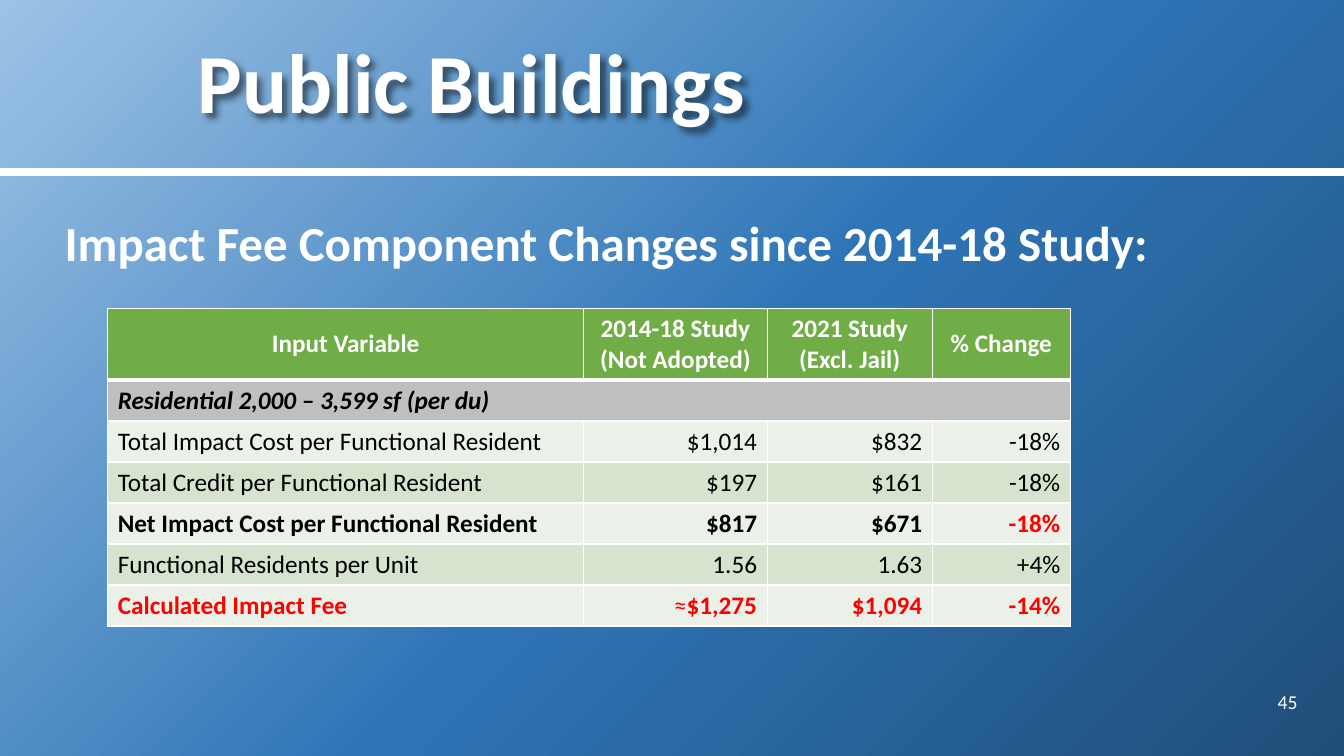
import copy
import pptx
import pptx.dml.color
import pptx.enum.shapes
import pptx.enum.text
import pptx.oxml
import pptx.oxml.ns
import pptx.util

Pt = pptx.util.Pt
ALIGN = pptx.enum.text.PP_ALIGN
ANCHOR = pptx.enum.text.MSO_ANCHOR
qn = pptx.oxml.ns.qn

COLORS = {
    "white": "FFFFFF", "black": "000000", "red": "FF0000",
    "sky": "9DC3E6", "blue": "2E75B6", "navy": "1F4E79",
    "header": "70AD47", "section": "BFBFBF", "light": "EBF1E9", "dark": "D5E3CF",
}
COLUMN_WIDTHS = [340, 131, 118, 98.6]
HEADERS = ["Input Variable", "2014-18 Study (Not Adopted)", "2021 Study (Excl. Jail)", "% Change"]
SECTION = "Residential 2,000 – 3,599 sf (per du)"
# Each row: cell texts, bold, label and value colour, change colour
ROWS = [
    (["Total Impact Cost per Functional Resident", "$1,014", "$832", "-18%"], False, "black", "black"),
    (["Total Credit per Functional Resident", "$197", "$161", "-18%"], False, "black", "black"),
    (["Net Impact Cost per Functional Resident", "$817", "$671", "-18%"], True, "black", "red"),
    (["Functional Residents per Unit", "1.56", "1.63", "+4%"], False, "black", "black"),
    (["Calculated Impact Fee", "≈$1,275", "$1,094", "-14%"], True, "red", "red"),
]


def rgb(name):
    return pptx.dml.color.RGBColor.from_string(COLORS[name])


def drawing_xml(body):
    """Parse an element whose first tag takes the DrawingML namespace."""
    tag, rest = body.split(" ", 1)
    return pptx.oxml.parse_xml(f"{tag} {pptx.oxml.ns.nsdecls('a')} {rest}")


class SlideBuilder:
    font_name = "Calibri"

    def __init__(self, slide):
        self.slide = slide

    def background(self, stops):
        """Fill the slide diagonally with (position, colour) stops."""
        fill = self.slide.background.fill
        fill.gradient()
        fill.gradient_angle = 315
        stop_list = next(self.slide.element.iter(qn("a:gsLst")))
        stop_list.insert(1, copy.deepcopy(stop_list[0]))
        for element, stop, (position, color) in zip(stop_list, fill.gradient_stops, stops):
            stop.color.rgb = rgb(color)
            element.set("pos", str(position * 1000))

    def run(self, paragraph, text, size, color, bold=False, italic=False):
        run = paragraph.add_run()
        run.text = text
        font = run.font
        font.name, font.size = self.font_name, Pt(size)
        font.bold, font.italic = bold, italic
        font.color.rgb = rgb(color)

    def frame(self, shape, box, anchor, align):
        """Place a text shape and return its first paragraph."""
        shape.left, shape.top, shape.width, shape.height = map(Pt, box)
        text_frame = shape.text_frame
        text_frame.word_wrap = True
        text_frame.auto_size = pptx.enum.text.MSO_AUTO_SIZE.NONE
        text_frame.vertical_anchor = anchor
        paragraph = text_frame.paragraphs[0]
        paragraph.alignment = align
        paragraph.space_before = Pt(0)
        return paragraph

    def title(self, text, box):
        shape = self.slide.shapes.title
        paragraph = self.frame(shape, box, ANCHOR.MIDDLE, ALIGN.LEFT)
        paragraph.line_spacing = 0.9
        self.run(paragraph, text, 60, "white", bold=True)
        shape.element.spPr.append(drawing_xml(
            '<a:effectLst ><a:outerShdw blurRad="50800" dist="50800" dir="2700000" algn="tl">'
            '<a:srgbClr val="000000"><a:alpha val="50000"/></a:srgbClr>'
            '</a:outerShdw></a:effectLst>'))

    def body(self, text, box):
        paragraph = self.frame(self.slide.placeholders[1], box, ANCHOR.TOP, ALIGN.LEFT)
        paragraph.line_spacing = 1.2
        properties = paragraph._p.get_or_add_pPr()
        properties.set("marL", "0")
        properties.set("indent", "0")
        properties.append(drawing_xml("<a:buNone />"))
        self.run(paragraph, text, 35, "white", bold=True)

    def slide_number(self, text, box):
        shape = self.slide.shapes.add_textbox(*map(Pt, box))
        paragraph = self.frame(shape, box, ANCHOR.MIDDLE, ALIGN.RIGHT)
        self.run(paragraph, text, 14, "white")

    def rule(self, top, width, weight):
        line = self.slide.shapes.add_connector(
            pptx.enum.shapes.MSO_CONNECTOR.STRAIGHT, Pt(0), Pt(top), Pt(width), Pt(top))
        line.line.color.rgb = rgb("white")
        line.line.width = Pt(weight)
        line.element.spPr.append(drawing_xml("<a:effectLst />"))

    def table(self, left, top, widths, heights):
        frame = self.slide.shapes.add_table(
            len(heights), len(widths), Pt(left), Pt(top), Pt(sum(widths)), Pt(sum(heights)))
        for column, width in zip(frame.table.columns, widths):
            column.width = Pt(width)
        for row, height in zip(frame.table.rows, heights):
            row.height = Pt(height)
        return frame.table

    def cell(self, cell, text, fill, color, align, bold=False, italic=False, top=1, bottom=1):
        """Fill one cell; top and bottom are border weights."""
        properties = cell._tc.get_or_add_tcPr()
        for side, weight in (("L", 1), ("R", 1), ("T", top), ("B", bottom)):
            properties.append(drawing_xml(
                f'<a:ln{side} w="{Pt(weight)}"><a:solidFill><a:srgbClr val="{COLORS["white"]}"/>'
                f'</a:solidFill></a:ln{side}>'))
        cell.fill.solid()
        cell.fill.fore_color.rgb = rgb(fill)
        cell.vertical_anchor = ANCHOR.MIDDLE
        paragraph = cell.text_frame.paragraphs[0]
        paragraph.alignment = align
        if text.startswith("≈"):
            self.run(paragraph, "≈", 18, color)
            text = text[1:]
        if text:
            self.run(paragraph, text, 18, color, bold, italic)


def fill_table(builder, table):
    for column, header in enumerate(HEADERS):
        builder.cell(table.cell(0, column), header, "header", "white", ALIGN.CENTER, bold=True, bottom=3)
        builder.cell(table.cell(1, column), "" if column else SECTION, "section", "black",
                     ALIGN.LEFT, bold=True, italic=True, top=3)
    table.cell(1, 0).merge(table.cell(1, len(HEADERS) - 1))
    for index, (texts, bold, color, change_color) in enumerate(ROWS):
        fill = "dark" if index % 2 else "light"
        for column, text in enumerate(texts):
            builder.cell(table.cell(index + 2, column), text, fill,
                         change_color if column == 3 else color,
                         ALIGN.RIGHT if column else ALIGN.LEFT, bold)


def main():
    presentation = pptx.Presentation()
    presentation.slide_width, presentation.slide_height = Pt(960), Pt(540)
    builder = SlideBuilder(presentation.slides.add_slide(presentation.slide_layouts[1]))
    builder.background([(0, "sky"), (53, "blue"), (100, "navy")])
    builder.rule(123, 960, 6)
    builder.title("Public Buildings", (134, 0, 799, 123))
    builder.body("Impact Fee Component Changes since 2014-18 Study:", (39, 140, 894, 379))
    table = builder.table(77, 220.3, COLUMN_WIDTHS, [51] + [29.3] * (len(ROWS) + 1))
    fill_table(builder, table)
    builder.slide_number("45", (870, 487, 64, 29))
    presentation.save("out.pptx")


if __name__ == "__main__":
    main()
